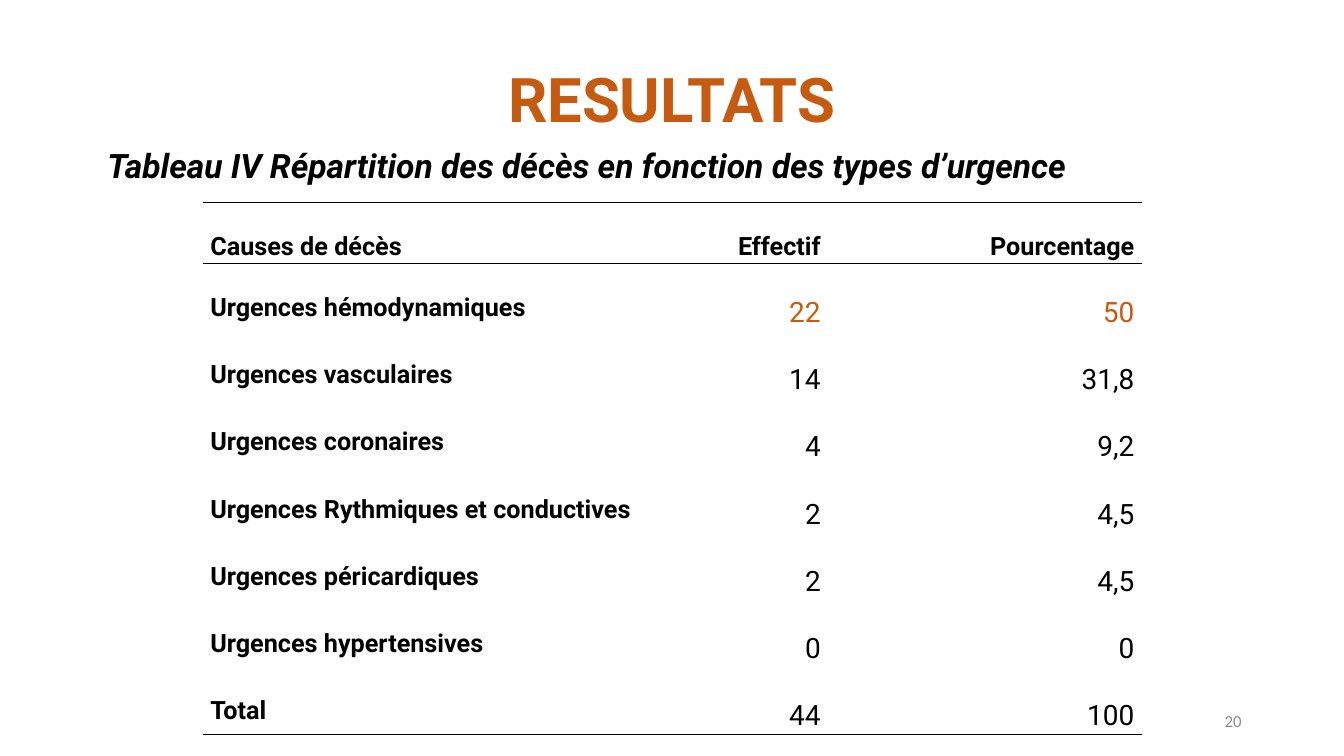
from dataclasses import dataclass

from lxml.etree import SubElement
from pptx import Presentation
from pptx.dml.color import RGBColor
from pptx.enum.text import MSO_ANCHOR as Anchor, PP_ALIGN as Align
from pptx.oxml.ns import qn
from pptx.util import Cm, Pt


@dataclass(frozen=True)
class Theme:
    font: str = "Roboto"
    number_font: str = "Calibri"
    accent: RGBColor = RGBColor(0xC5, 0x5A, 0x11)
    text: RGBColor = RGBColor(0, 0, 0)
    muted: RGBColor = RGBColor(0x8C, 0x8C, 0x8C)
    background: RGBColor = RGBColor(0xFF, 0xFF, 0xFF)
    title_size: int = 44
    caption_size: int = 24
    value_size: int = 20
    label_size: int = 18
    number_size: int = 12


THEME = Theme()

HEADER = ("Causes de décès", "Effectif", "Pourcentage")
ROWS = (
    ("Urgences hémodynamiques", "22", "50"),
    ("Urgences vasculaires", "14", "31,8"),
    ("Urgences coronaires", "4", "9,2"),
    ("Urgences Rythmiques et conductives", "2", "4,5"),
    ("Urgences péricardiques", "2", "4,5"),
    ("Urgences hypertensives", "0", "0"),
    ("Total", "44", "100"),
)
HIGHLIGHTED_ROW = 1
COLUMN_SHARES = (0.526, 0.14, 0.334)


def write(frame, text, size, color=THEME.text, name=THEME.font, bold=False,
          italic=False, align=Align.LEFT, spacing=1.0):
    paragraph = frame.paragraphs[0]
    paragraph.alignment = align
    paragraph.line_spacing = spacing
    run = paragraph.add_run()
    run.text = text
    font = run.font
    font.name, font.size, font.color.rgb = name, Pt(size), color
    font.bold, font.italic = bold, italic
    return paragraph


def add_title(slide, box, text):
    title = slide.shapes.title
    title.left, title.top, title.width, title.height = map(Cm, box)
    title.text_frame.vertical_anchor = Anchor.MIDDLE
    write(title.text_frame, text, THEME.title_size, THEME.accent, bold=True,
          align=Align.CENTER, spacing=0.9)


def add_text_box(slide, box, anchor):
    frame = slide.shapes.add_textbox(*map(Cm, box)).text_frame
    frame.word_wrap = True
    frame.vertical_anchor = anchor
    return frame


def add_caption(slide, box, text):
    frame = add_text_box(slide, box, Anchor.TOP)
    paragraph = write(frame, text, THEME.caption_size, bold=True, italic=True, spacing=0.9)
    paragraph.space_before = Pt(10)


def add_slide_number(slide, box, text):
    frame = add_text_box(slide, box, Anchor.MIDDLE)
    write(frame, text, THEME.number_size, THEME.muted, THEME.number_font, align=Align.RIGHT)


def set_borders(cell, ruled_sides):
    properties = cell._tc.get_or_add_tcPr()
    for side in "LRTB":
        line = SubElement(properties, qn(f"a:ln{side}"), w=str(Pt(1)))
        if side in ruled_sides:
            fill = SubElement(line, qn("a:solidFill"))
            SubElement(fill, qn("a:srgbClr"), val=str(THEME.text))
        else:
            SubElement(line, qn("a:noFill"))


def add_results_table(slide, box):
    rows = (HEADER, *ROWS)
    last = len(rows) - 1
    frame = slide.shapes.add_table(len(rows), len(HEADER), *map(Cm, box))
    table = frame.table
    table.first_row = table.horz_banding = False
    for column, share in zip(table.columns, COLUMN_SHARES):
        column.width = Cm(box[2] * share)

    # Rules: above and below the header, and below the total
    rules = {0: "TB", 1: "T", last: "B"}
    for i, row in enumerate(rows):
        for j, text in enumerate(row):
            cell = table.cell(i, j)
            set_borders(cell, rules.get(i, ""))
            cell.fill.solid()
            cell.fill.fore_color.rgb = THEME.background
            cell.margin_left = cell.margin_right = Cm(0.19)
            cell.margin_top = cell.margin_bottom = 0
            is_label = i == 0 or j == 0
            highlighted = i == HIGHLIGHTED_ROW and not is_label
            write(cell.text_frame, text,
                  THEME.label_size if is_label else THEME.value_size,
                  THEME.accent if highlighted else THEME.text,
                  bold=is_label, spacing=2.0,
                  align=Align.RIGHT if j else Align.LEFT)


def main():
    presentation = Presentation()
    presentation.slide_width, presentation.slide_height = Cm(33.87), Cm(19.05)
    slide = presentation.slides.add_slide(presentation.slide_layouts[5])

    # Heading
    add_title(slide, (2.33, 0.74, 29.21, 3.68), "RESULTATS")
    add_caption(slide, (2.46, 3.63, 29.21, 14.02),
                "Tableau IV Répartition des décès en fonction des types d’urgence")
    # Results
    add_results_table(slide, (5.11, 5.11, 23.67, 10.8))
    # Footer
    add_slide_number(slide, (23.92, 17.66, 7.62, 1.01), "20")

    presentation.save("out.pptx")


if __name__ == "__main__":
    main()
